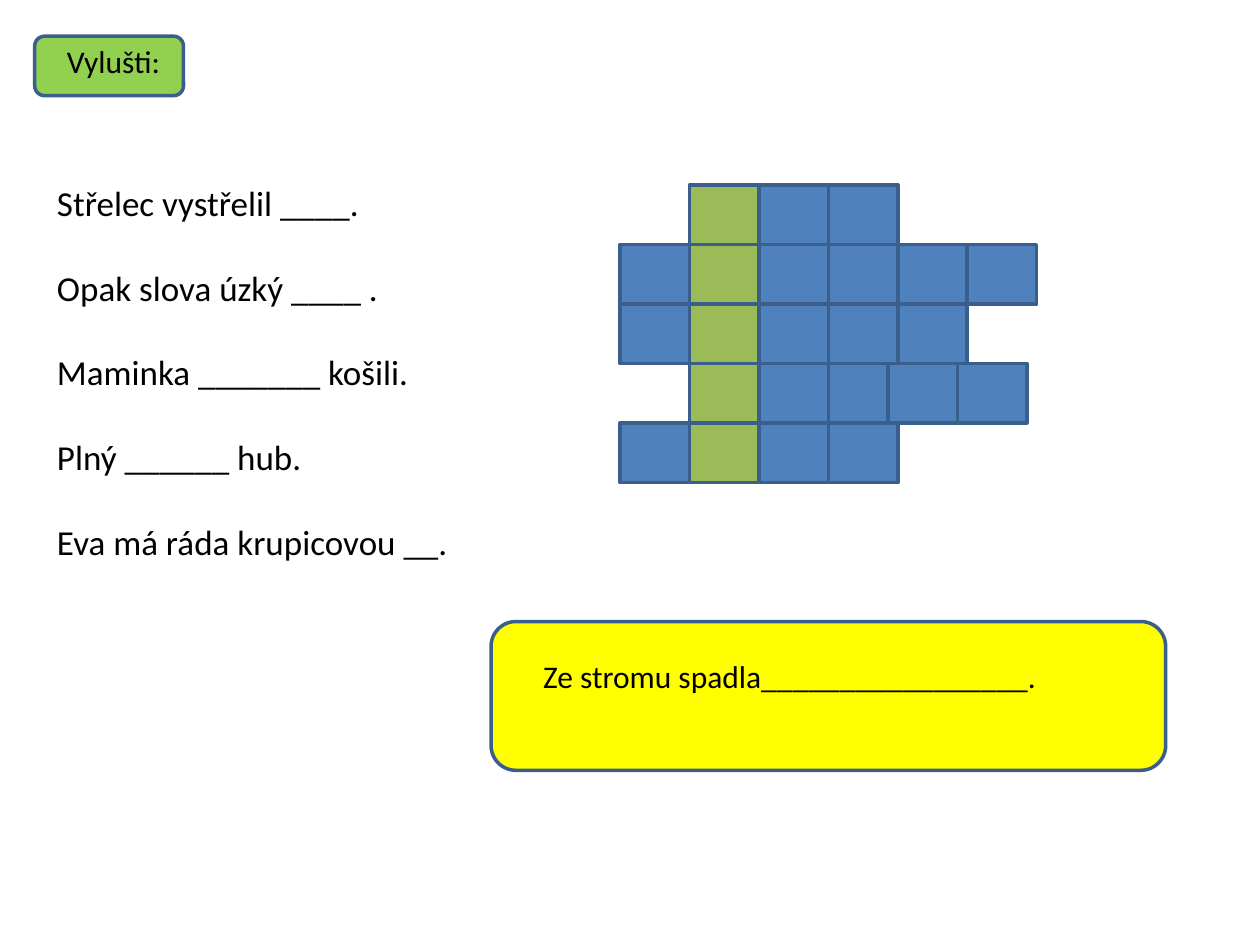
import pptx
import pptx.util
import pptx.dml.color
import pptx.enum.shapes
import pptx.enum.text

Cm, Pt = pptx.util.Cm, pptx.util.Pt
RGB = pptx.dml.color.RGBColor.from_string
SHAPE = pptx.enum.shapes.MSO_SHAPE
COLORS = {"text": "000000", "line": "3A5F8C", "label": "92D050",
          "answer": "FFFF00", "cell": "4F81BD", "key": "9BBB59"}

prs = pptx.Presentation()
prs.slide_width, prs.slide_height = Cm(25.4), Cm(19.05)
s = prs.slides.add_slide(prs.slide_layouts[6])


def add_box(kind, left, top, width, height, color):
    sp = s.shapes.add_shape(kind, Cm(left), Cm(top), Cm(width), Cm(height))
    sp.shadow.inherit = False
    sp.fill.solid()
    sp.fill.fore_color.rgb = RGB(COLORS[color])
    sp.line.color.rgb = RGB(COLORS["line"])
    sp.line.width = Pt(2)


def add_text(left, top, width, height, lines, size, gap=0):
    tf = s.shapes.add_textbox(Cm(left), Cm(top), Cm(width), Cm(height)).text_frame
    tf.word_wrap = True
    tf.auto_size = pptx.enum.text.MSO_AUTO_SIZE.SHAPE_TO_FIT_TEXT
    for i, line in enumerate(lines):
        p = tf.paragraphs[0] if i == 0 else tf.add_paragraph()
        p.text = line
        p.font.name = "Calibri"
        p.font.size = Pt(size)
        p.font.color.rgb = RGB(COLORS["text"])
        if i < len(lines) - 1:
            p.space_after = Pt(gap)


# Label and answer panels
add_box(SHAPE.ROUNDED_RECTANGLE, 0.7, 0.73, 3, 1.2, "label")
add_box(SHAPE.ROUNDED_RECTANGLE, 9.9, 12.53, 13.6, 3, "answer")
add_text(1.1, 0.73, 6.4, 1.03, ["Vylušti:"], 18)

# Clues, one line apart
clues = ["Střelec vystřelil ____.", "Opak slova úzký ____ .",
         "Maminka _______ košili.", "Plný ______ hub.",
         "Eva má ráda krupicovou __."]
add_text(0.9, 3.53, 8.8, 7.95, clues, 20, gap=24.4)

# Crossword: first and last column of each row; column 1 holds the solution
cell_w, cell_h = 1.4, 1.2
grid_left, grid_top, key_col = 12.5, 3.73, 1
rows = [(1, 3), (0, 5), (0, 4), (1, 5), (0, 3)]
for row, (first, last) in enumerate(rows):
    for col in range(first, last + 1):
        # The last two cells of the fourth row sit slightly to the left
        shift = 0.2 if row == 3 and col >= 4 else 0
        add_box(SHAPE.RECTANGLE, grid_left + col * cell_w - shift,
                grid_top + row * cell_h, cell_w, cell_h,
                "key" if col == key_col else "cell")

# Answer sentence
add_text(10.7, 13.13, 12.2, 1.03, ["Ze stromu spadla_________________."], 18)

prs.save("out.pptx")
